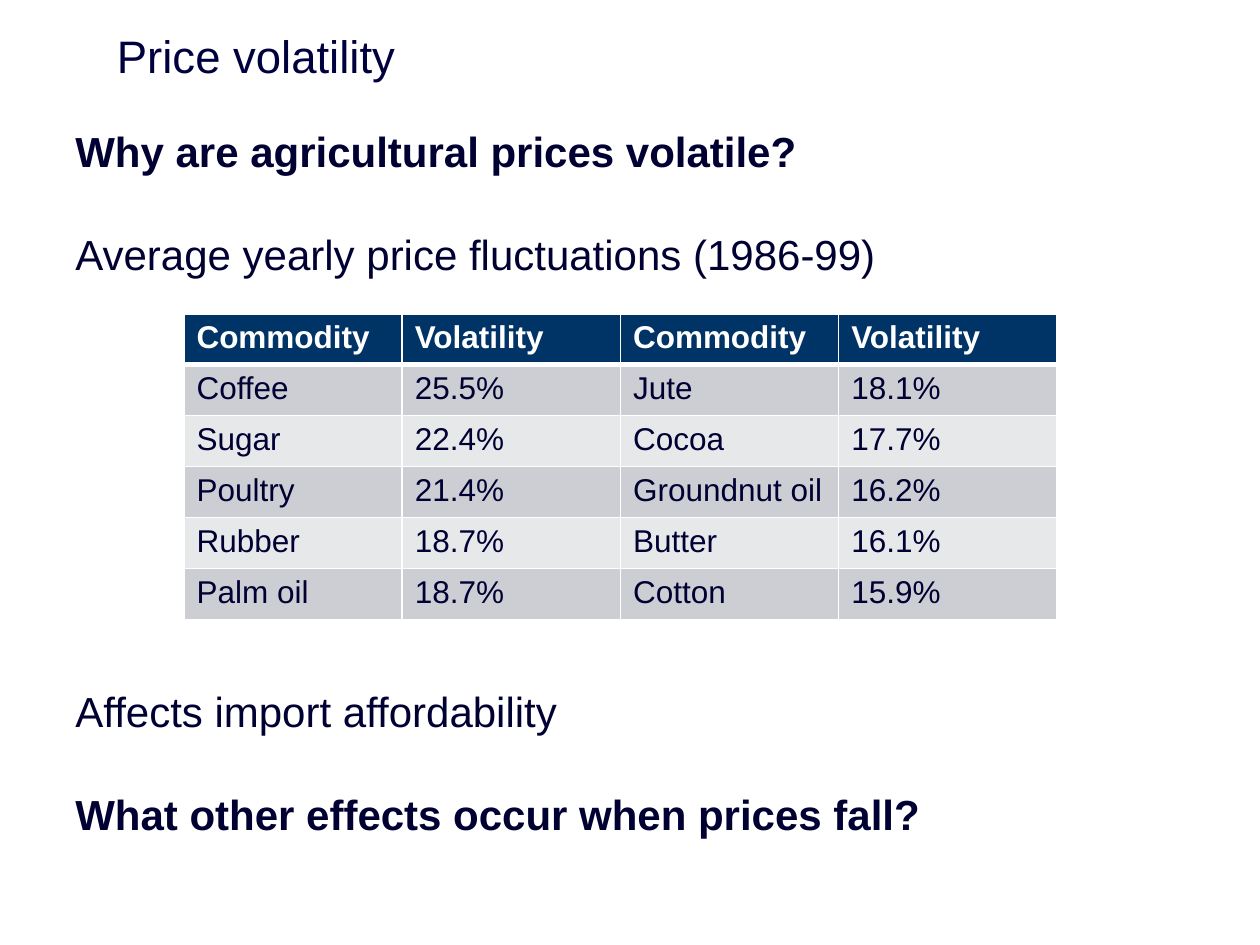
from lxml.etree import SubElement
from pptx import Presentation
from pptx.dml.color import RGBColor
from pptx.enum.text import MSO_ANCHOR
from pptx.oxml.ns import qn
from pptx.util import Inches, Pt

NAVY = "000032"
WHITE = "FFFFFF"
ROWS = [
    ["Commodity", "Volatility", "Commodity", "Volatility"],
    ["Coffee", "25.5%", "Jute", "18.1%"],
    ["Sugar", "22.4%", "Cocoa", "17.7%"],
    ["Poultry", "21.4%", "Groundnut oil", "16.2%"],
    ["Rubber", "18.7%", "Butter", "16.1%"],
    ["Palm oil", "18.7%", "Cotton", "15.9%"],
]
BODY = [
    ("Why are agricultural prices volatile?", True, 0),
    ("Average yearly price fluctuations (1986-99)", False, 30),
    ("Affects import affordability", False, 232),
    ("What other effects occur when prices fall?", True, 30),
]


def color(value):
    return RGBColor.from_string(value)


def write(para, text, size, shade, bold=False):
    span = para.add_run()
    span.text = text
    span.font.color.rgb = color(shade)
    formats = {"name": "Arial", "size": Pt(size), "bold": bold}
    for name, value in formats.items():
        setattr(span.font, name, value)


def add_text_frame(page, left, top, width, height, **formats):
    box = page.shapes.add_textbox(
        Inches(left), Inches(top), Inches(width), Inches(height)
    )
    frame = box.text_frame
    frame.word_wrap = True
    for name, value in formats.items():
        setattr(frame, name, value)
    return frame


def add_title(page):
    frame = add_text_frame(
        page, 0.83, -0.19, 9.33, 1.25, vertical_anchor=MSO_ANCHOR.MIDDLE
    )
    write(frame.paragraphs[0], "Price volatility", 26, "00003E")


def add_body(page):
    frame = add_text_frame(page, 0.5, 0.92, 9.07, 6.56, margin_top=Inches(0.08))
    for index, (text, bold, gap) in enumerate(BODY):
        para = frame.add_paragraph() if index else frame.paragraphs[0]
        if gap:
            para.space_before = Pt(gap)
        write(para, text, 24, NAVY, bold)


def set_border(properties, side, width):
    line = SubElement(properties, qn(f"a:{side}"), w=str(Pt(width)))
    fill = SubElement(line, qn("a:solidFill"))
    SubElement(fill, qn("a:srgbClr"), val=WHITE)


def format_cell(cell, text, row):
    header = row == 0
    write(cell.text_frame.paragraphs[0], text, 18, WHITE if header else NAVY, header)
    properties = cell._tc.get_or_add_tcPr()
    widths = {
        "lnL": 1,
        "lnR": 1,
        "lnT": 3 if row == 1 else 1,
        "lnB": 3 if header else 1,
    }
    for side, width in widths.items():
        set_border(properties, side, width)
    cell.fill.solid()
    band = "CCCED3" if row % 2 else "E7E8EA"
    cell.fill.fore_color.rgb = color("003366" if header else band)


def add_volatility_table(page):
    table = page.shapes.add_table(
        len(ROWS), len(ROWS[0]),
        Inches(1.46), Inches(2.49), Inches(6.93), Inches(2.43),
    ).table
    for row, texts in enumerate(ROWS):
        for column, text in enumerate(texts):
            format_cell(table.cell(row, column), text, row)


def main():
    deck = Presentation()
    deck.slide_width = Inches(10)
    deck.slide_height = Inches(7.5)
    page = deck.slides.add_slide(deck.slide_layouts[6])
    add_title(page)
    add_body(page)
    add_volatility_table(page)
    deck.save("out.pptx")


if __name__ == "__main__":
    main()
